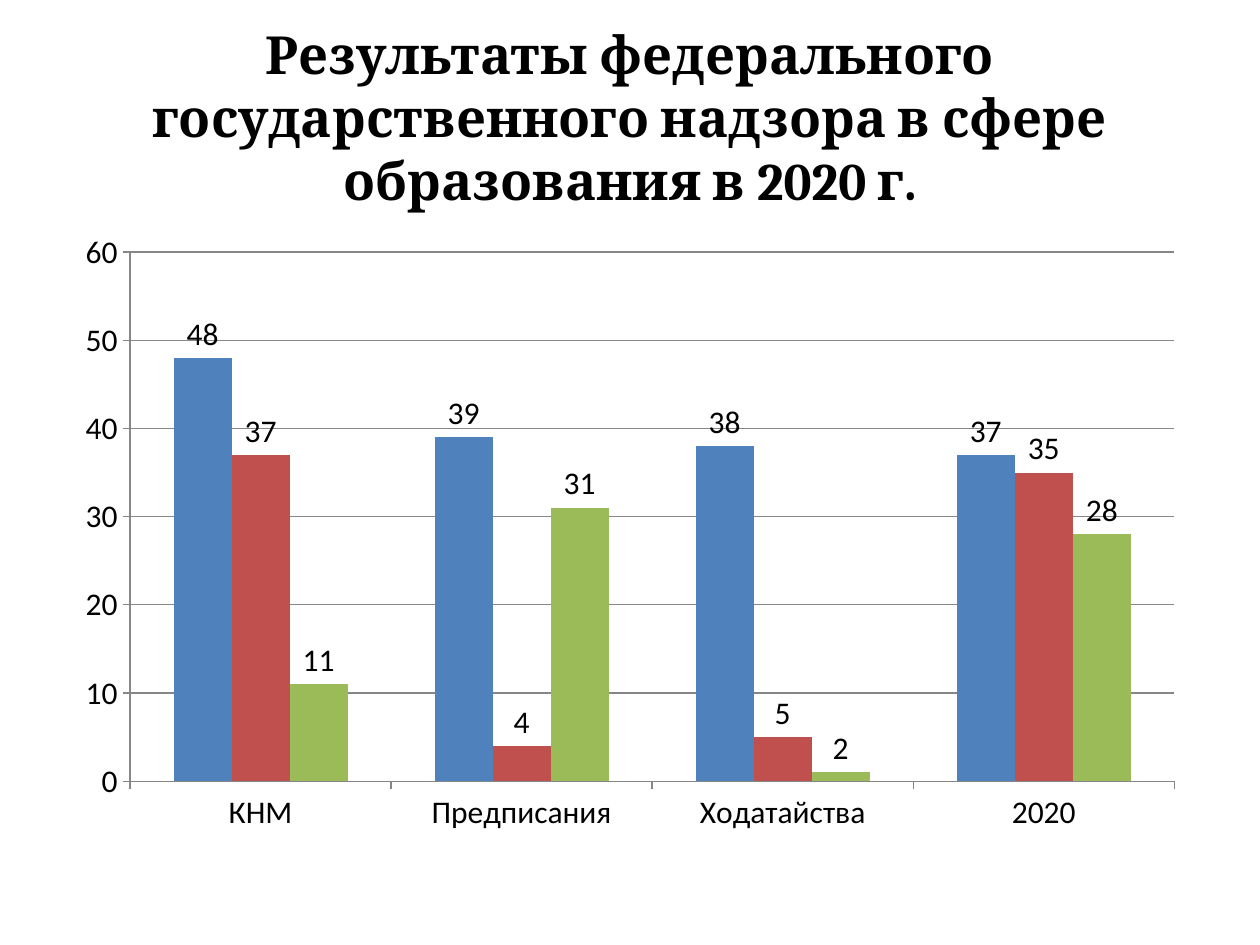
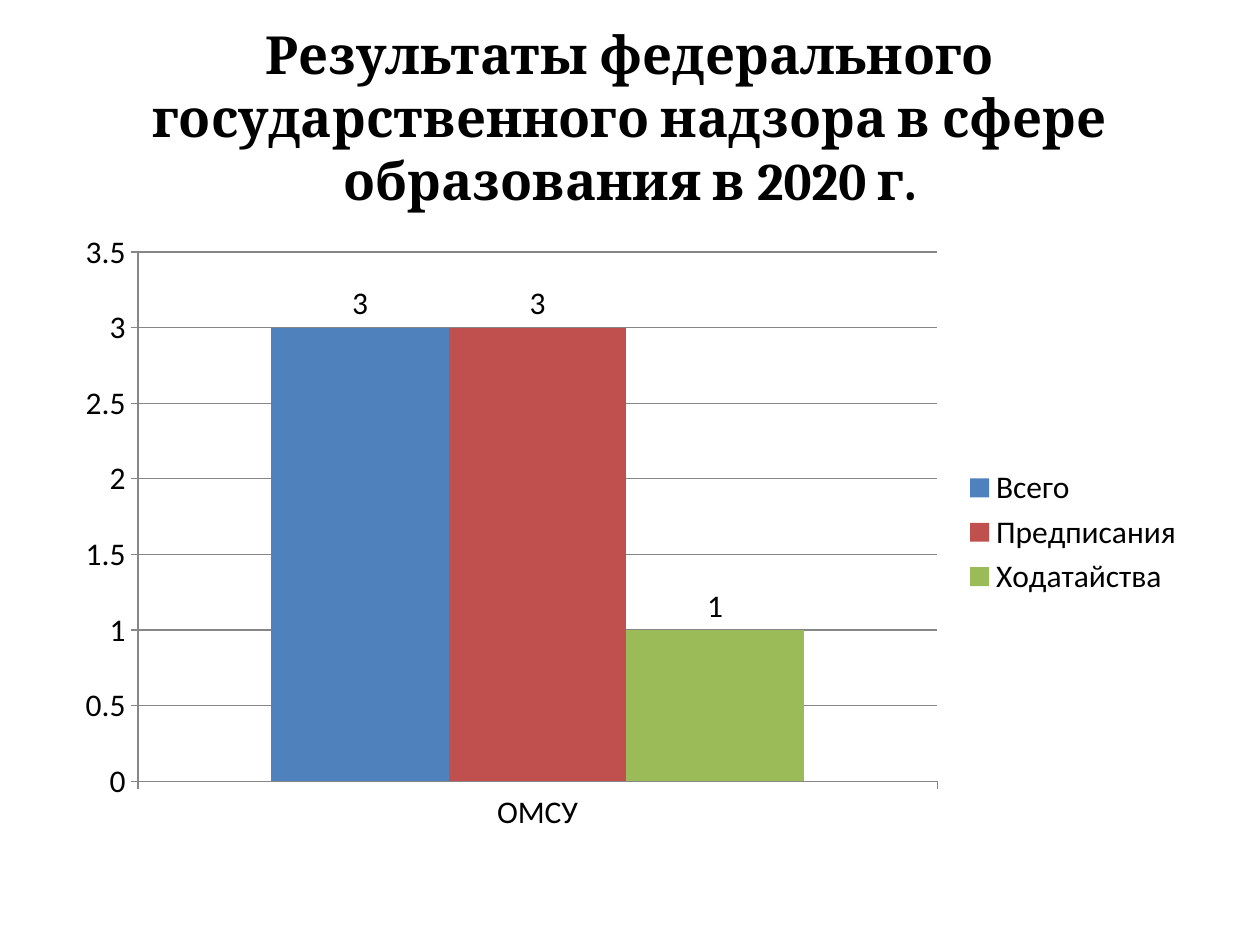
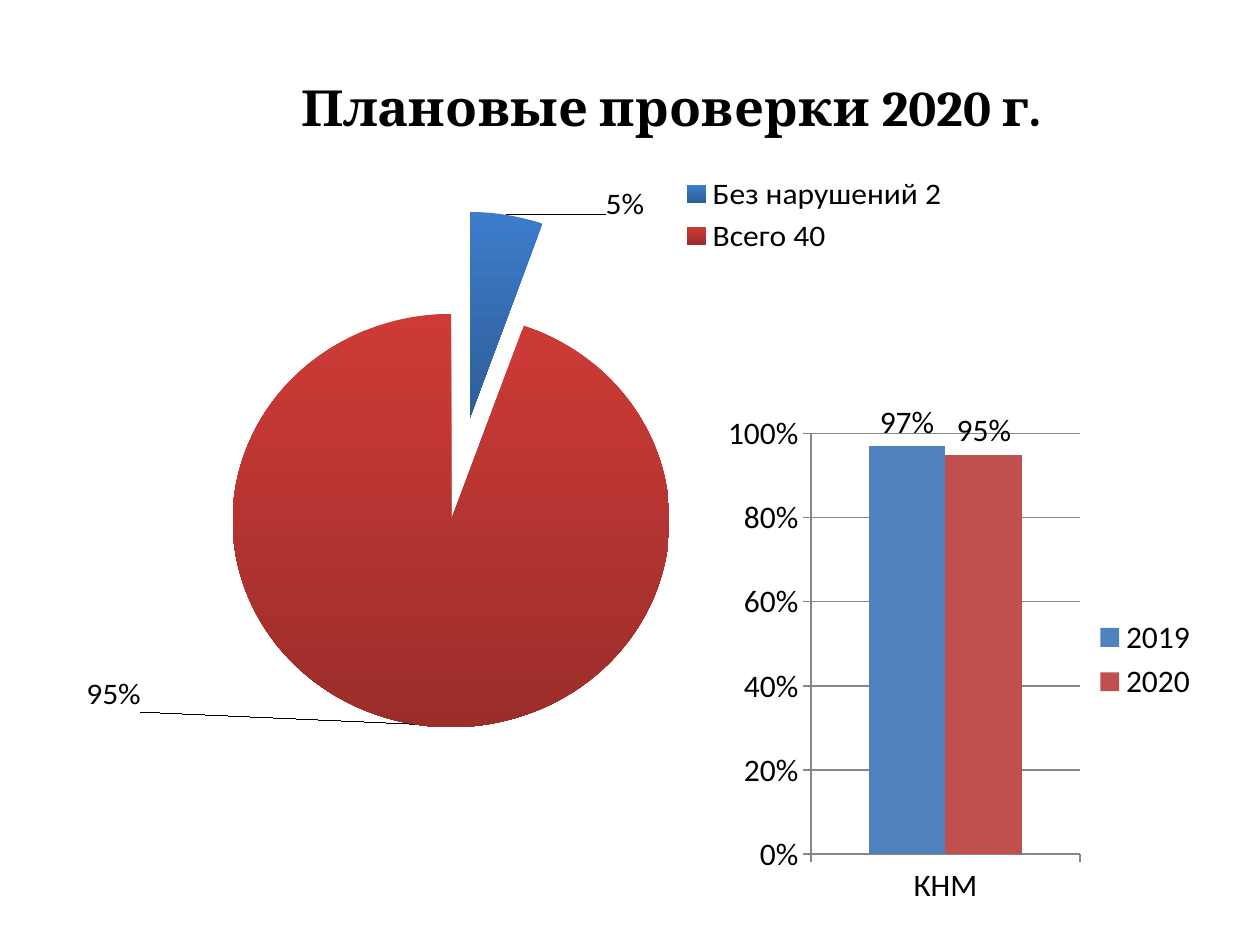
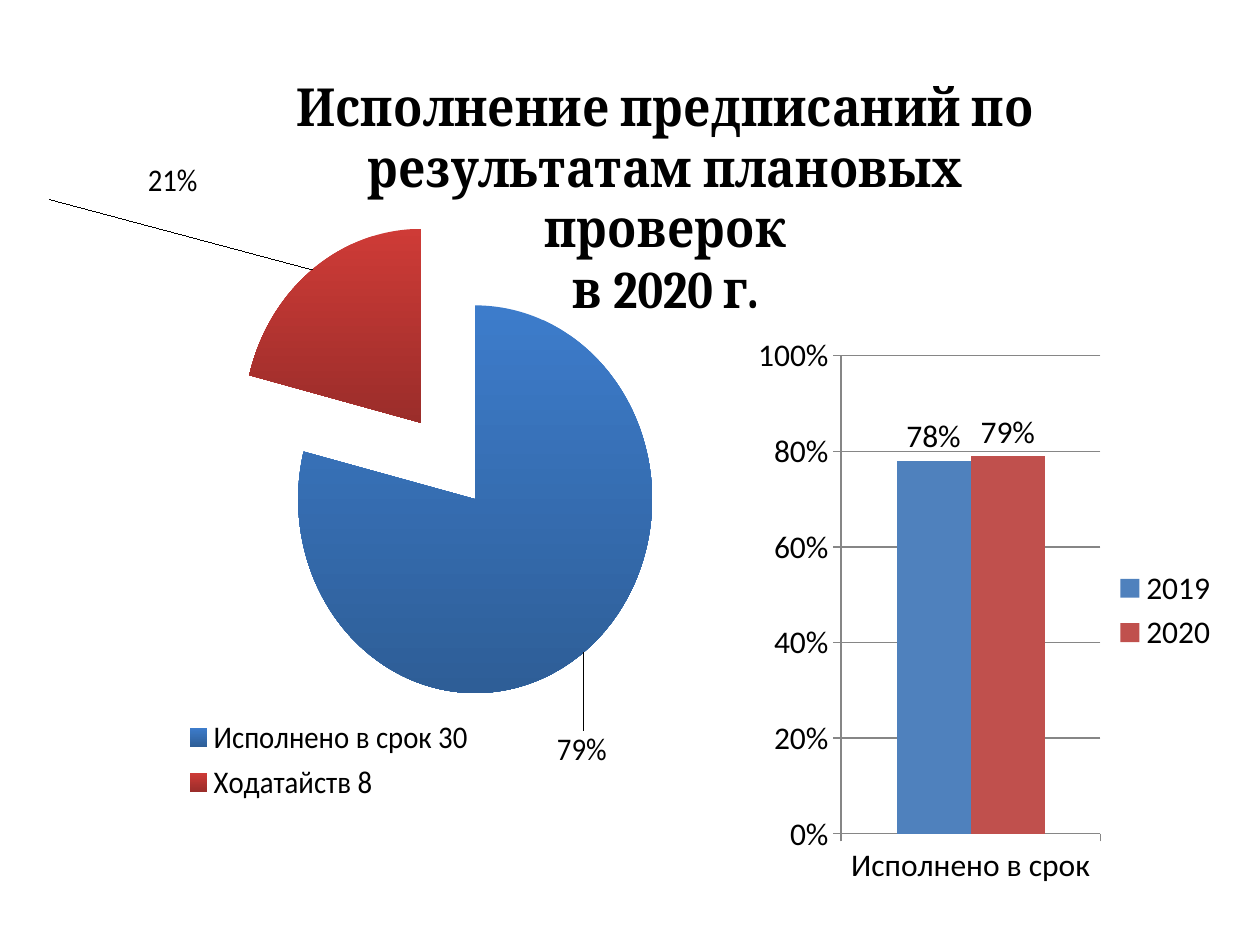
from dataclasses import dataclass

from lxml import etree
from pptx import Presentation
from pptx.chart.chart import Chart
from pptx.chart.data import CategoryChartData
from pptx.dml.color import RGBColor
from pptx.enum.chart import XL_CHART_TYPE as ChartType
from pptx.enum.chart import XL_LABEL_POSITION as LabelPos
from pptx.enum.chart import XL_LEGEND_POSITION as LegendPos
from pptx.enum.chart import XL_TICK_MARK as TickMark
from pptx.enum.text import MSO_ANCHOR, PP_ALIGN
from pptx.oxml.ns import qn
from pptx.slide import Slide
from pptx.util import Inches, Pt

COLORS = {
    "text": "000000",
    "axis": "868686",
    "blue": "4F81BD",
    "red": "C0504D",
    "green": "9BBB59",
    "blue_light": "3D7CCB",
    "blue_dark": "2E5E97",
    "red_light": "CE3B37",
    "red_dark": "9B2D2A",
}
SERIES_COLORS = ("blue", "red", "green")
TITLE_FONT, BODY_FONT = "Cambria", "Calibri"
TITLE_SIZE, BODY_SIZE = Pt(30), Pt(18)
PERCENT = "0%"
SUPERVISION_TITLE = (
    "Результаты федерального государственного надзора "
    "в сфере образования в 2020 г."
)
WIDE_BOX = (0.5, 1.75, 9, 4.95)


@dataclass
class Columns:
    box: tuple[float, ...]
    categories: list[str]
    series: dict[str, list[float]]
    legend: bool = True
    percent: bool = False


@dataclass
class Slice:
    name: str
    value: int
    label: str
    label_shift: tuple[float, float]


@dataclass
class Pie:
    """Positions inside the chart are fractions of its box."""
    box: tuple[float, ...]
    title: list[str]
    series_name: str
    slices: list[Slice]
    title_at: tuple[float, float]
    plot_at: tuple[float, ...]
    legend_at: tuple[float, ...]


def rgb(name: str) -> RGBColor:
    return RGBColor.from_string(COLORS[name])


def set_font(font, name: str = BODY_FONT, size: int = BODY_SIZE, bold: bool = False) -> None:
    font.name, font.size, font.bold = name, size, bold
    font.color.rgb = rgb("text")


def set_layout(parent, index: int, place: tuple[float, ...], edge: bool = True) -> None:
    """Give a chart part a manual layout; without edge, place is a shift."""
    for old in parent.findall(qn("c:layout")):
        parent.remove(old)
    layout = etree.Element(qn("c:layout"))
    manual = etree.SubElement(layout, qn("c:manualLayout"))
    values = []
    if len(place) == 4 and index == 0:
        values.append(("layoutTarget", "inner"))
    if edge:
        values += [("xMode", "edge"), ("yMode", "edge")]
    values += zip("xywh", place)
    for tag, value in values:
        etree.SubElement(manual, qn(f"c:{tag}")).set("val", str(value))
    parent.insert(index, layout)


def add_chart(s: Slide, kind: ChartType, box: tuple[float, ...],
              data: CategoryChartData, legend: bool) -> Chart:
    chart = s.shapes.add_chart(kind, *map(Inches, box), data).chart
    set_font(chart.font)
    chart.has_title = False
    chart.has_legend = legend
    if legend:
        chart.legend.position = LegendPos.RIGHT
        chart.legend.include_in_layout = False
    return chart


def add_columns(s: Slide, spec: Columns) -> Chart:
    data = CategoryChartData(number_format=PERCENT if spec.percent else "General")
    data.categories = spec.categories
    for name, values in spec.series.items():
        data.add_series(name, values)
    chart = add_chart(s, ChartType.COLUMN_CLUSTERED, spec.box, data, spec.legend)
    plot = chart.plots[0]
    plot.vary_by_categories = False
    plot.gap_width, plot.overlap = 150, 0
    for series, color in zip(plot.series, SERIES_COLORS):
        series.format.fill.solid()
        series.format.fill.fore_color.rgb = rgb(color)
        labels = series.data_labels
        labels.show_value = True
        labels.position = LabelPos.OUTSIDE_END
        set_font(labels.font)
    value_axis = chart.value_axis
    value_axis.has_major_gridlines = True
    for axis in (chart.category_axis, value_axis):
        axis.major_tick_mark = TickMark.OUTSIDE
        axis.minor_tick_mark = TickMark.NONE
        axis.format.line.color.rgb = rgb("axis")
    value_axis.major_gridlines.format.line.color.rgb = rgb("axis")
    if spec.percent:
        value_axis.minimum_scale, value_axis.maximum_scale = 0, 1
        value_axis.major_unit = 0.2
        value_axis.tick_labels.number_format = PERCENT
        value_axis.tick_labels.number_format_is_linked = False
        for series in plot.series:
            series.data_labels.number_format = PERCENT
            series.data_labels.number_format_is_linked = False
    return chart


def set_point_label(point, text: str) -> None:
    label = point.data_label
    label.position = LabelPos.OUTSIDE_END
    p = label.text_frame.paragraphs[0]
    p.add_run().text = text
    set_font(p.runs[0].font)


def add_pie(s: Slide, spec: Pie) -> None:
    data = CategoryChartData()
    data.categories = [part.name for part in spec.slices]
    data.add_series(spec.series_name, [part.value for part in spec.slices])
    chart = add_chart(s, ChartType.PIE, spec.box, data, True)
    chart.has_title = True
    tf = chart.chart_title.text_frame
    for i, line in enumerate(spec.title):
        p = tf.add_paragraph() if i else tf.paragraphs[0]
        r = p.add_run()
        r.text = line
        set_font(r.font, TITLE_FONT, TITLE_SIZE, True)

    series = chart.plots[0].series[0]
    explosion = etree.Element(qn("c:explosion"))
    explosion.set("val", "25")
    series._element.find(qn("c:tx")).addnext(explosion)
    series.data_labels.show_value = True
    for i, (part, color) in enumerate(zip(spec.slices, SERIES_COLORS)):
        point = series.points[i]
        fill = point.format.fill
        fill.gradient()
        fill.gradient_angle = 270
        for stop, shade in zip(fill.gradient_stops, ("light", "dark")):
            stop.color.rgb = rgb(f"{color}_{shade}")
        set_point_label(point, part.label)
    labels = series._element.findall(f".//{qn('c:dLbl')}")
    for label, part in zip(labels, spec.slices):
        set_layout(label, 1, part.label_shift, edge=False)

    root = chart._chartSpace.chart
    set_layout(root.find(qn("c:title")), 1, spec.title_at)
    set_layout(root.find(qn("c:legend")), 1, spec.legend_at)
    set_layout(root.find(qn("c:plotArea")), 0, spec.plot_at)


def add_titled_slide(prs: Presentation, title: str) -> Slide:
    s = prs.slides.add_slide(prs.slide_layouts[5])
    sp = s.shapes.title
    sp.left, sp.top, sp.width, sp.height = map(Inches, (0.5, 0.3, 9, 1.25))
    tf = sp.text_frame
    tf.text = title
    tf.word_wrap = True
    tf.vertical_anchor = MSO_ANCHOR.MIDDLE
    p = tf.paragraphs[0]
    p.alignment = PP_ALIGN.CENTER
    set_font(p.font, TITLE_FONT, TITLE_SIZE, True)
    return s


def add_share_slide(prs: Presentation, pie: Pie, columns: Columns) -> None:
    """Pie of one year's results beside a comparison of two years."""
    s = prs.slides.add_slide(prs.slide_layouts[6])
    add_pie(s, pie)
    add_columns(s, columns)


def main() -> None:
    prs = Presentation()
    prs.slide_width, prs.slide_height = Inches(10), Inches(7.5)

    chart = add_columns(add_titled_slide(prs, SUPERVISION_TITLE), Columns(
        WIDE_BOX,
        ["КНМ", "Предписания", "Ходатайства", "2020"],
        {
            "Series 1": [48, 39, 38, 37],
            "Series 2": [37, 4, 5, 35],
            "Series 3": [11, 31, 1, 28],
        },
        legend=False,
    ))
    set_point_label(chart.plots[0].series[2].points[2], "2")

    add_columns(add_titled_slide(prs, SUPERVISION_TITLE), Columns(
        WIDE_BOX,
        ["ОМСУ"],
        {"Всего": [3], "Предписания": [3], "Ходатайства": [1]},
    ))

    inspections = "Плановые проверки 2020 г."
    add_share_slide(
        prs,
        Pie(
            (0.5, 0.31, 8.64, 5.78), [inspections], inspections,
            [
                Slice("Без нарушений 2", 2, "5%", (0.09, 0.02)),
                Slice("Всего 40", 35, "95%", (-0.25, -0.08)),
            ],
            title_at=(0.21, 0.04),
            plot_at=(0.06, 0.25, 0.61, 0.75),
            legend_at=(0.55, 0.19, 0.28, 0.13),
        ),
        Columns((5.7, 3.2, 3.91, 4.06), ["КНМ"],
                {"2019": [0.97], "2020": [0.95]}, percent=True),
    )
    add_share_slide(
        prs,
        Pie(
            (0.39, 0.39, 9, 6.41),
            ["Исполнение предписаний по результатам плановых проверок", "в 2020 г."],
            "Series 1",
            [
                Slice("Исполнено в срок 30", 30, "79%", (-0.03, 0.09)),
                Slice("Ходатайств 8", 8, "21%", (-0.25, -0.08)),
            ],
            title_at=(0.14, 0.03),
            plot_at=(0.03, 0.21, 0.52, 0.6),
            legend_at=(0.01, 0.82, 0.33, 0.12),
        ),
        Columns((5.94, 2.58, 3.83, 4.53), ["Исполнено в срок"],
                {"2019": [0.78], "2020": [0.79]}, percent=True),
    )
    prs.save("out.pptx")


if __name__ == "__main__":
    main()
